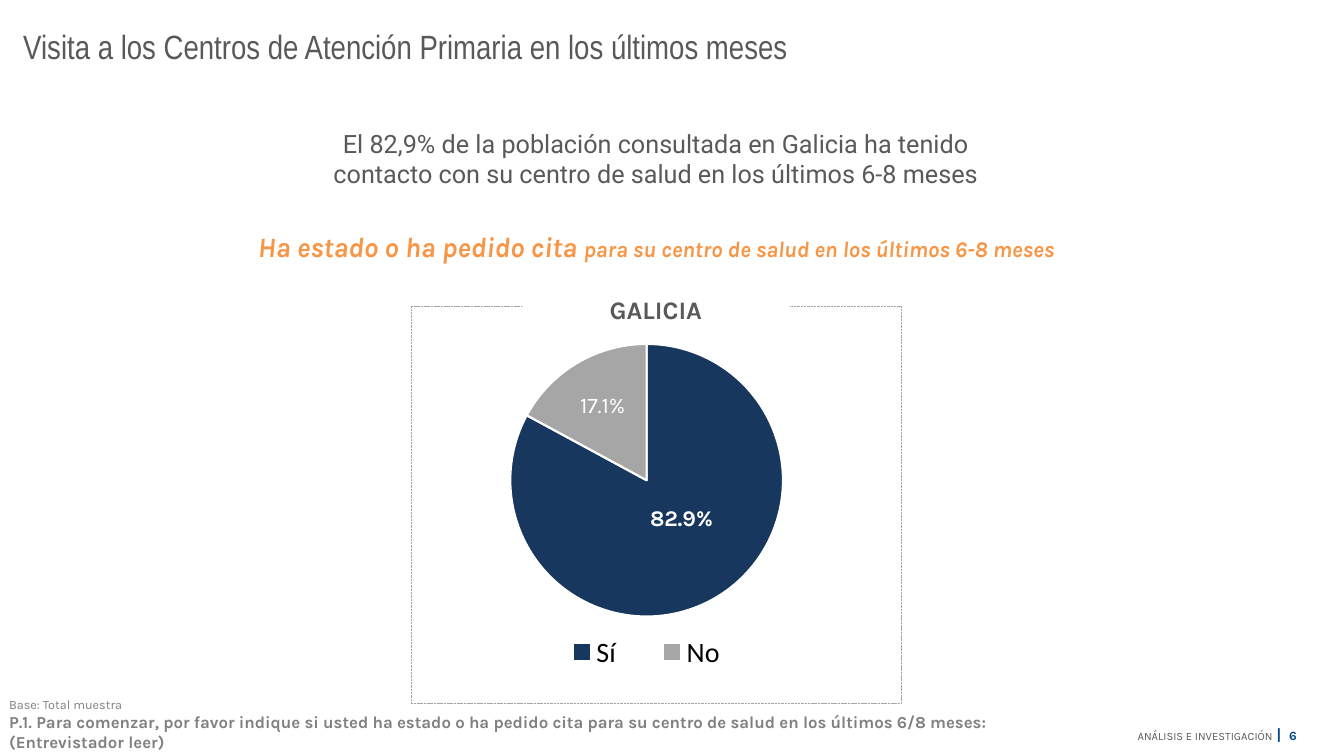
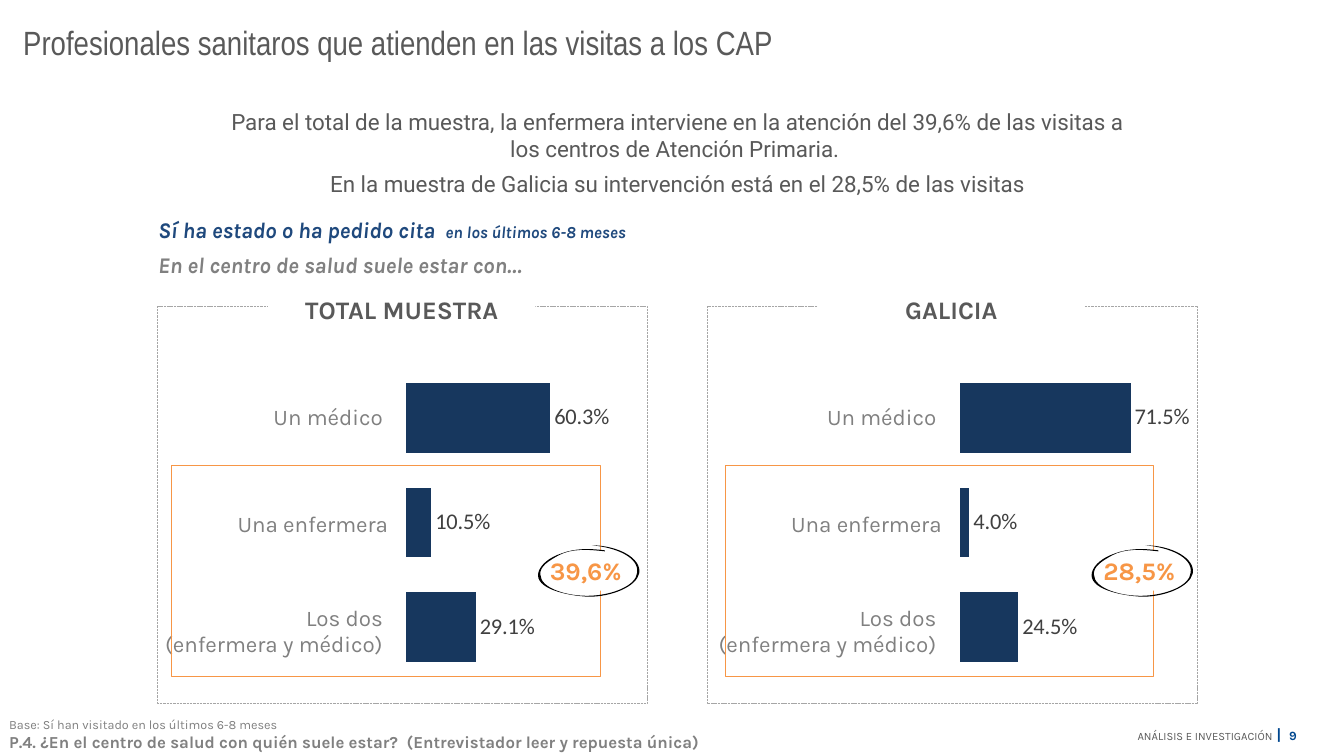
"""Build two survey slides about visits to primary care centres."""
import dataclasses
import typing

import lxml.etree
import pptx
import pptx.chart.data
import pptx.dml.color
import pptx.enum.chart
import pptx.enum.dml
import pptx.enum.shapes
import pptx.enum.text
import pptx.oxml.ns
import pptx.util

Inches, Pt = pptx.util.Inches, pptx.util.Pt
RGBColor = pptx.dml.color.RGBColor
Align, Anchor = pptx.enum.text.PP_ALIGN, pptx.enum.text.MSO_ANCHOR
ChartType, LabelPosition = pptx.enum.chart.XL_CHART_TYPE, pptx.enum.chart.XL_LABEL_POSITION
qn = pptx.oxml.ns.qn

WHITE = RGBColor(0xFF, 0xFF, 0xFF)
BLACK = RGBColor(0, 0, 0)
DARK = RGBColor(0x59, 0x59, 0x59)
CHARCOAL = RGBColor(0x40, 0x40, 0x40)
GREY = RGBColor(0x80, 0x80, 0x80)
LIGHT = RGBColor(0xA6, 0xA6, 0xA6)
NAVY = RGBColor(0x17, 0x37, 0x5E)
BLUE = RGBColor(0x1F, 0x49, 0x7D)
FOOTER_BLUE = RGBColor(0x00, 0x47, 0x8F)
ORANGE = RGBColor(0xF7, 0x96, 0x46)

PERCENT = "0.0\\%"
NO_TABLE_STYLE = "{2D5ABB26-0587-4C30-8999-92F81FD0307C}"
PROFESSIONALS = ("Un médico ", "Una enfermera", "Los dos \n(enfermera y médico) ")
RING_START = (0.7, 0.06)
RING_CURVES = (
    ((0.55, 0.04), (0.4, 0.04), (0.27, 0.09)), ((0.15, 0.13), (0.06, 0.2), (0.04, 0.28)),
    ((0, 0.44), (0.32, 0.51), (0.54, 0.52)), ((0.77, 0.52), (1.01, 0.42), (1.04, 0.29)),
    ((1.07, 0.14), (0.83, 0.01), (0.57, 0.01)), ((0.57, 0), (0.57, 0.01), (0.57, 0.01)),
    ((0.81, 0.03), (1.04, 0.13), (1.02, 0.28)), ((1.01, 0.41), (0.78, 0.5), (0.56, 0.51)),
    ((0.34, 0.52), (0.06, 0.44), (0.06, 0.3)), ((0.05, 0.22), (0.15, 0.16), (0.24, 0.11)),
    ((0.37, 0.04), (0.53, 0.05), (0.7, 0.07)), ((0.7, 0.07), (0.7, 0.06), (0.7, 0.06)),
)


class Box(typing.NamedTuple):
    """Position and size, in inches on a slide or as fractions in a chart."""
    left: float
    top: float
    width: float
    height: float


@dataclasses.dataclass(frozen=True)
class Panel:
    """A framed sample with its results."""
    heading: str
    frame_left: float
    content_left: float
    shares: tuple[float, ...]
    nurse_total: str


PANELS = (Panel("TOTAL MUESTRA", 1.56, 1.18, (60.3, 10.5, 29.1), "39,6%"),
          Panel("GALICIA", 7.01, 6.67, (71.5, 4.0, 24.5), "28,5%"))


def style_font(font, name: str, size: float, color: RGBColor, bold: bool = False) -> None:
    """Set the look of a font."""
    font.name, font.size, font.bold = name, Pt(size), bold
    font.color.rgb = color


def paint(fill, color: typing.Optional[RGBColor]) -> None:
    """Fill with a colour, or with nothing."""
    if color is None:
        fill.background()
    else:
        fill.solid()
        fill.fore_color.rgb = color


def write(frame, text: str, *, size: float, color: RGBColor, font: str = "Karla",
          bold: bool = False, italic: bool = False, align=Align.LEFT,
          after: float = 0, same_line: bool = False) -> None:
    """Write formatted text in a new paragraph or at the end of the last one."""
    paragraph = frame.paragraphs[-1]
    if paragraph.runs and not same_line:
        paragraph = frame.add_paragraph()
    paragraph.alignment, paragraph.space_after = align, Pt(after)
    for index, line in enumerate(text.split("\n")):
        if index:
            paragraph.add_line_break()
        run = paragraph.add_run()
        run.text, run.font.italic = line, italic
        style_font(run.font, font, size, color, bold)


def add_text(slide, box: Box, anchor=Anchor.TOP):
    """Add a wrapping text box and return its text frame."""
    frame = slide.shapes.add_textbox(*map(Inches, box)).text_frame
    frame.word_wrap, frame.vertical_anchor = True, anchor
    return frame


def add_rectangle(slide, box: Box, *, fill: typing.Optional[RGBColor] = None,
                  line: typing.Optional[RGBColor] = None, width: float = 0.5, anchor=Anchor.TOP):
    """Add a flat rectangle."""
    rectangle = slide.shapes.add_shape(pptx.enum.shapes.MSO_SHAPE.RECTANGLE, *map(Inches, box))
    rectangle.shadow.inherit = False
    paint(rectangle.fill, fill)
    paint(rectangle.line.fill, line)
    if line is not None:
        rectangle.line.width = Pt(width)
    rectangle.text_frame.word_wrap, rectangle.text_frame.vertical_anchor = True, anchor
    return rectangle


def start_slide(deck, title: str, title_box: Box, page: int):
    """Add a slide with its title and footer."""
    slide = deck.slides.add_slide(deck.slide_layouts[5])
    heading = slide.shapes.title
    heading.left, heading.top, heading.width, heading.height = map(Inches, title_box)
    heading.text_frame.auto_size = pptx.enum.text.MSO_AUTO_SIZE.NONE
    heading.text_frame.vertical_anchor = Anchor.TOP
    write(heading.text_frame, title, size=24, color=DARK, font="Arial Narrow")
    footer = add_text(slide, Box(11.05, 7.14, 1.91, 0.29), Anchor.MIDDLE)
    for text, size, color in (("ANÁLISIS E INVESTIGACIÓN", 8, DARK), (" ", 11, DARK),
                              ("|  ", 11, FOOTER_BLUE), (str(page), 9, FOOTER_BLUE)):
        write(footer, text, size=size, color=color, bold=color == FOOTER_BLUE,
              align=Align.RIGHT, same_line=True)
    return slide


def add_question(slide, base: str, question: str, width: float, height: float) -> None:
    """Add the sample base and survey question at the bottom edge."""
    note = add_text(slide, Box(0, 7.5 - height, width, height), Anchor.BOTTOM)
    note.margin_left = note.margin_right = Inches(0.09)
    note.margin_top = note.margin_bottom = Inches(0.04)
    write(note, base, size=9, color=GREY)
    write(note, question, size=12, color=GREY, bold=True)


def add_frame(slide, left: float, heading: str) -> None:
    """Add a dashed frame with a heading over its top edge."""
    border = add_rectangle(slide, Box(left, 3.04, 4.86, 3.94), line=LIGHT, width=0.25)
    border.line.dash_style = pptx.enum.dml.MSO_LINE.SQUARE_DOT
    label = add_rectangle(slide, Box(left + 1.1, 2.81, 2.65, 0.53), fill=WHITE, anchor=Anchor.MIDDLE)
    write(label.text_frame, heading, size=18, color=DARK, bold=True, align=Align.CENTER, after=6)


def set_layout(parent, index: int, settings: dict) -> None:
    """Place a chart part by hand."""
    for old in parent.findall(qn("c:layout")):
        parent.remove(old)
    layout = lxml.etree.Element(qn("c:layout"))
    manual = lxml.etree.SubElement(layout, qn("c:manualLayout"))
    for tag, value in settings.items():
        lxml.etree.SubElement(manual, qn("c:" + tag)).set("val", str(value))
    parent.insert(index, layout)


def add_chart(slide, kind, box: Box, categories: tuple, values: tuple, plot_area: Box, *,
              color: RGBColor, label_font: str, label_color: RGBColor, position):
    """Add a transparent one-series chart with percentage labels."""
    data = pptx.chart.data.CategoryChartData()
    data.categories = categories
    data.add_series("Series 1", values)
    chart = slide.shapes.add_chart(kind, *map(Inches, box), data).chart
    chart.has_title = chart.has_legend = False
    style_font(chart.font, "Calibri", 11, color)
    body = chart._chartSpace.find(qn("c:chart"))
    background = lxml.etree.Element(qn("c:spPr"))
    lxml.etree.SubElement(background, qn("a:noFill"))
    lxml.etree.SubElement(lxml.etree.SubElement(background, qn("a:ln")), qn("a:noFill"))
    body.addnext(background)
    set_layout(body.find(qn("c:plotArea")), 0, {"layoutTarget": "inner", "xMode": "edge",
                                                "yMode": "edge", **dict(zip("xywh", plot_area))})
    labels = chart.plots[0].series[0].data_labels
    labels.show_value, labels.position = True, position
    labels.number_format, labels.number_format_is_linked = PERCENT, False
    style_font(labels.font, label_font, 16, label_color)
    return chart


def add_visit_pie(slide) -> None:
    """Add the pie of people who contacted their health centre."""
    chart = add_chart(slide, ChartType.PIE, Box(4.23, 3.06, 4.55, 3.92), ("Sí ", "No"), (82.9, 17.1),
                      Box(0.18, 0.09, 0.6, 0.69), color=BLACK, label_font="Karla",
                      label_color=WHITE, position=LabelPosition.CENTER)
    chart.plots[0].vary_by_categories = True
    answers = chart.plots[0].series[0]
    for index, (color, bold, x, y) in enumerate(((NAVY, True, 0, -0.05), (LIGHT, False, -0.02, -0.04))):
        answer = answers.points[index]
        paint(answer.format.fill, color)
        paint(answer.format.line.fill, WHITE)
        answer.format.line.width = Pt(1.5)
        style_font(answer.data_label.font, "Karla", 16, WHITE, bold)
        answer.data_label.position = LabelPosition.CENTER
        label = answers._element.findall(".//" + qn("c:dLbl"))[index]
        label.insert(1, lxml.etree.Element(qn("c:numFmt"), formatCode=PERCENT, sourceLinked="0"))
        set_layout(label, 1, {"x": x, "y": y})
    chart.has_legend = True
    chart.legend.position = pptx.enum.chart.XL_LEGEND_POSITION.BOTTOM
    chart.legend.include_in_layout = False
    style_font(chart.legend.font, "Calibri", 20, BLACK)
    set_layout(chart.legend._element, 1, {"xMode": "edge", "yMode": "edge", "x": 0.25, "y": 0.81,
                                          "w": 0.46, "h": 0.12})


def add_share_bars(slide, left: float, shares: tuple[float, ...]) -> None:
    """Add the bars of visits by professional."""
    chart = add_chart(slide, ChartType.BAR_CLUSTERED, Box(left, 3.59, 3.29, 3.22), ("1", "2", "3"),
                      shares, Box(0, 0.01, 0.72, 0.97), color=CHARCOAL, label_font="Calibri",
                      label_color=CHARCOAL, position=LabelPosition.OUTSIDE_END)
    plot = chart.plots[0]
    plot.gap_width, plot.vary_by_categories = 50, False
    paint(plot.series[0].format.fill, NAVY)
    chart.category_axis.reverse_order = True
    chart.value_axis.minimum_scale, chart.value_axis.maximum_scale = 0, 100
    chart.value_axis.has_major_gridlines = False
    chart.category_axis.visible = chart.value_axis.visible = False


def add_professionals(slide, left: float) -> None:
    """Add the table that names the bars."""
    table = slide.shapes.add_table(3, 1, *map(Inches, (left, 3.61, 2.68, 3.19))).table
    table.first_row = table.horz_banding = False
    table._tbl.tblPr.find(qn("a:tableStyleId")).text = NO_TABLE_STYLE
    for cell, name in zip(table.iter_cells(), PROFESSIONALS):
        paint(cell.fill, None)
        cell.vertical_anchor, cell.margin_bottom = Anchor.MIDDLE, 0
        cell.margin_left = cell.margin_right = cell.margin_top = Inches(0.01)
        write(cell.text_frame, name, size=16, color=GREY, align=Align.RIGHT)


def add_ring(slide, left: float, top: float) -> None:
    """Add a hand-drawn ring of Bézier curves."""
    builder = slide.shapes.build_freeform(Inches(left + RING_START[0]), Inches(top + RING_START[1]))
    builder.add_line_segments([(Inches(left + x), Inches(top + y)) for *_, (x, y) in RING_CURVES])
    ring = builder.convert_to_shape()
    ring.left, ring.top, ring.width, ring.height = map(Inches, (left, top, 1.06, 0.52))
    outline = ring._element.find(".//" + qn("a:path"))
    for child in list(outline):
        outline.remove(child)
    outline.set("w", str(ring.width))
    outline.set("h", str(ring.height))
    curves = [("a:cubicBezTo", points) for points in RING_CURVES]
    for tag, points in [("a:moveTo", (RING_START,)), *curves, ("a:close", ())]:
        step = lxml.etree.SubElement(outline, qn(tag))
        for x, y in points:
            lxml.etree.SubElement(step, qn("a:pt"), x=str(Inches(x)), y=str(Inches(y)))
    ring.shadow.inherit = False
    paint(ring.fill, BLACK)
    paint(ring.line.fill, None)


def add_panel(slide, panel: Panel) -> None:
    """Add one sample with its table, bars and nurse total."""
    left = panel.content_left
    add_frame(slide, panel.frame_left, panel.heading)
    add_professionals(slide, left)
    add_share_bars(slide, left + 2.85, panel.shares)
    add_rectangle(slide, Box(left + 0.52, 4.62, 4.25, 2.09), line=ORANGE)
    total = add_rectangle(slide, Box(left + 4.14, 5.46, 0.98, 0.4), fill=WHITE).text_frame
    write(total, panel.nurse_total, size=18, color=ORANGE, bold=True, align=Align.CENTER)
    add_ring(slide, left + 4.12, 5.4)


def build_visits(deck) -> None:
    """Build the slide on recent visits."""
    slide = start_slide(deck, "Visita a los Centros de Atención Primaria en los últimos meses",
                        Box(0.13, 0.21, 10.64, 0.91), 6)
    add_question(slide, "Base: Total muestra", "P.1. Para comenzar, por favor indique si usted ha estado "
                 "o ha pedido cita para su centro de salud en los últimos 6/8 meses: (Entrevistador leer)",
                 10.32, 0.63)
    lead = add_rectangle(slide, Box(1.55, 2.23, 9.92, 0.44), fill=WHITE).text_frame
    for text, size in (("Ha estado o ha pedido cita ", 20),
                       ("para su centro de salud en los últimos 6-8 meses", 16)):
        write(lead, text, size=size, color=ORANGE, bold=True, italic=True, align=Align.CENTER,
              after=6, same_line=True)
    add_frame(slide, 4.08, "GALICIA")
    add_visit_pie(slide)
    message = add_text(slide, Box(3.07, 1.06, 6.87, 1.02), Anchor.MIDDLE)
    write(message, "El 82,9% de la población consultada en Galicia ha tenido contacto con su centro de "
          "salud en los últimos 6-8 meses", size=18, color=DARK, font="Roboto", align=Align.CENTER, after=6)


def build_professionals(deck) -> None:
    """Build the slide on the professionals seen."""
    slide = start_slide(deck, "Profesionales sanitaros que atienden en las visitas a los CAP",
                        Box(0.13, 0.17, 11.42, 0.5), 9)
    add_question(slide, "Base: Sí han visitado en los últimos 6-8 meses", "P.4. ¿En el centro de salud "
                 "con quién suele estar?  (Entrevistador leer y repuesta única)", 9.19, 0.44)
    lead = add_rectangle(slide, Box(1.47, 2.09, 5.83, 0.72), fill=WHITE).text_frame
    for text, size, color, same_line in (("Sí ha estado o ha pedido cita  ", 16, BLUE, False),
                                         ("en los últimos 6-8 meses", 12, BLUE, True),
                                         ("En el centro de salud suele estar con…", 16, GREY, False)):
        write(lead, text, size=size, color=color, bold=True, italic=True, after=6, same_line=same_line)
    for panel in PANELS:
        add_panel(slide, panel)
    message = add_rectangle(slide, Box(2.05, 1.07, 9.34, 0.89), fill=WHITE, anchor=Anchor.MIDDLE)
    for text in ("Para el total de la muestra, la enfermera interviene en la atención del 39,6% de las "
                 "visitas a los centros de Atención Primaria. ",
                 "En la muestra de Galicia su intervención está en el 28,5% de las visitas"):
        write(message.text_frame, text, size=16, color=DARK, font="Roboto", align=Align.CENTER, after=6)


if __name__ == "__main__":
    presentation = pptx.Presentation()
    presentation.slide_width, presentation.slide_height = Inches(13.33), Inches(7.5)
    build_visits(presentation)
    build_professionals(presentation)
    presentation.save("out.pptx")
